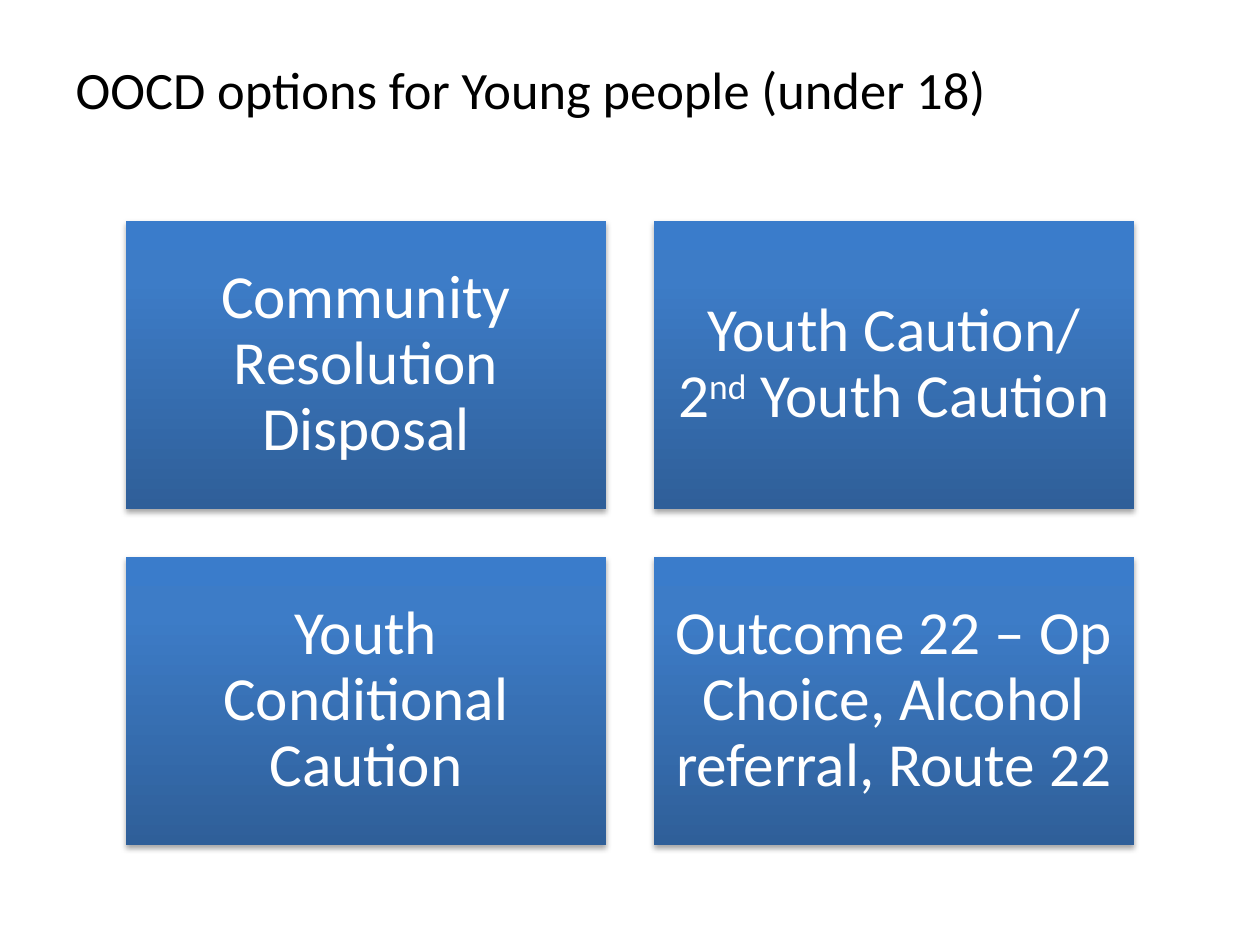
from pptx import Presentation
from pptx.dml.color import RGBColor
from pptx.enum.shapes import MSO_SHAPE
from pptx.enum.text import MSO_ANCHOR, PP_ALIGN
from pptx.oxml import parse_xml
from pptx.oxml.ns import nsdecls, qn
from pptx.util import Pt

PX = 914400 // 126


def px(length):
    return length * PX


def colour(code):
    return RGBColor.from_string(code)


class OptionsSlide:
    font = "Calibri"
    stops = ((0, "2F5F99"), (80, "3D7CC7"), (100, "3A7CCB"))

    def __init__(self, deck):
        self.page = deck.slides.add_slide(deck.slide_layouts[5])

    def place(self, shape, left, top, width, height):
        shape.left, shape.top = px(left), px(top)
        shape.width, shape.height = px(width), px(height)

    def style(self, span, size, code):
        span.font.name = self.font
        span.font.size = Pt(size)
        span.font.color.rgb = colour(code)

    def title(self, text, left, top, width, height):
        box = self.page.shapes.title
        self.place(box, left, top, width, height)
        frame = box.text_frame
        frame.text = text
        frame.word_wrap = True
        frame.vertical_anchor = MSO_ANCHOR.TOP
        frame.margin_top = px(19)
        para = frame.paragraphs[0]
        para.alignment = PP_ALIGN.LEFT
        self.style(para.runs[0], 30, "000000")

    def gradient(self, box):
        box.fill.gradient()
        box.fill.gradient_angle = 90
        stop_list = box._element.spPr.find(qn("a:gradFill")).find(qn("a:gsLst"))
        for stop in list(stop_list):
            stop_list.remove(stop)
        for position, code in self.stops:
            stop_list.append(parse_xml(
                f'<a:gs {nsdecls("a")} pos="{position * 1000}">'
                f'<a:srgbClr val="{code}"/></a:gs>'))

    def shadow(self, box):
        box.shadow.inherit = False
        box._element.spPr.find(qn("a:effectLst")).append(parse_xml(
            f'<a:outerShdw {nsdecls("a")} blurRad="40000" dist="23000" '
            'dir="5400000" rotWithShape="0"><a:srgbClr val="000000">'
            '<a:alpha val="35000"/></a:srgbClr></a:outerShdw>'))

    def option(self, parts, left, top, width, height):
        """Draw a box; every second part of its text is superscript."""
        box = self.page.shapes.add_shape(
            MSO_SHAPE.RECTANGLE, px(left), px(top), px(width), px(height))
        self.gradient(box)
        box.line.fill.background()
        self.shadow(box)
        frame = box.text_frame
        frame.word_wrap = True
        frame.vertical_anchor = MSO_ANCHOR.MIDDLE
        frame.margin_left = frame.margin_right = px(19)
        frame.margin_top = frame.margin_bottom = px(19)
        para = frame.paragraphs[0]
        para.alignment = PP_ALIGN.CENTER
        para.line_spacing = 0.9
        for index, part in enumerate(parts):
            span = para.add_run()
            span.text = part
            self.style(span, 35, "FFFFFF")
            if index % 2:
                span.font._element.set("baseline", "30000")


def main():
    deck = Presentation()
    deck.slide_width, deck.slide_height = px(1260), px(945)
    slide = OptionsSlide(deck)

    # Heading
    slide.title("OOCD options for Young people (under 18)", 63, 38, 997, 157)

    # Two by two grid of options
    options = (
        ("Community Resolution Disposal",),
        ("Youth Caution/ 2", "nd", " Youth Caution"),
        ("Youth Conditional Caution",),
        ("Outcome 22 – Op Choice, Alcohol referral, Route 22",),
    )
    width, height, gap = 480, 288, 48
    for index, parts in enumerate(options):
        row, column = divmod(index, 2)
        slide.option(parts, 126 + column * (width + gap),
                     221 + row * (height + gap), width, height)

    deck.save("out.pptx")


if __name__ == "__main__":
    main()
